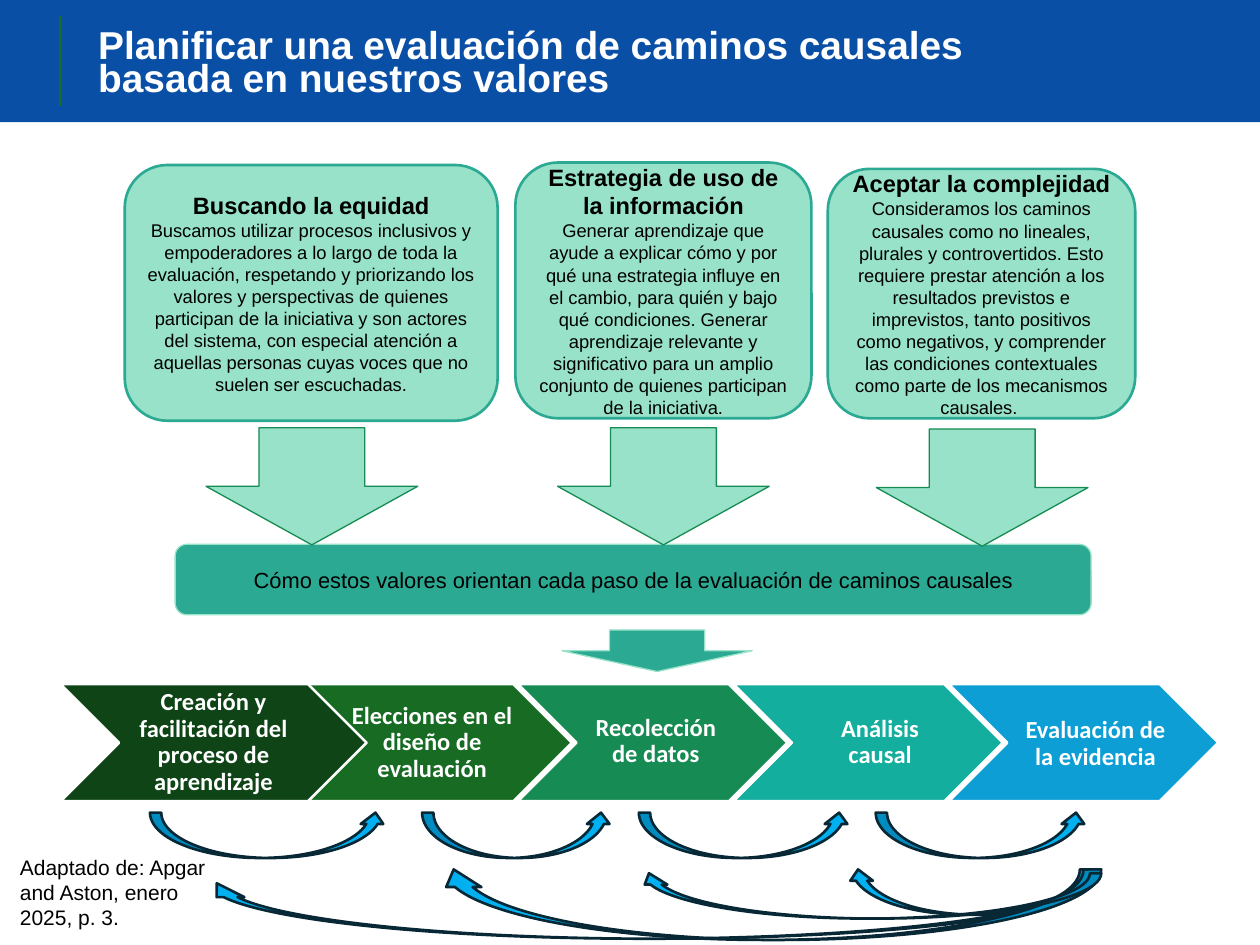
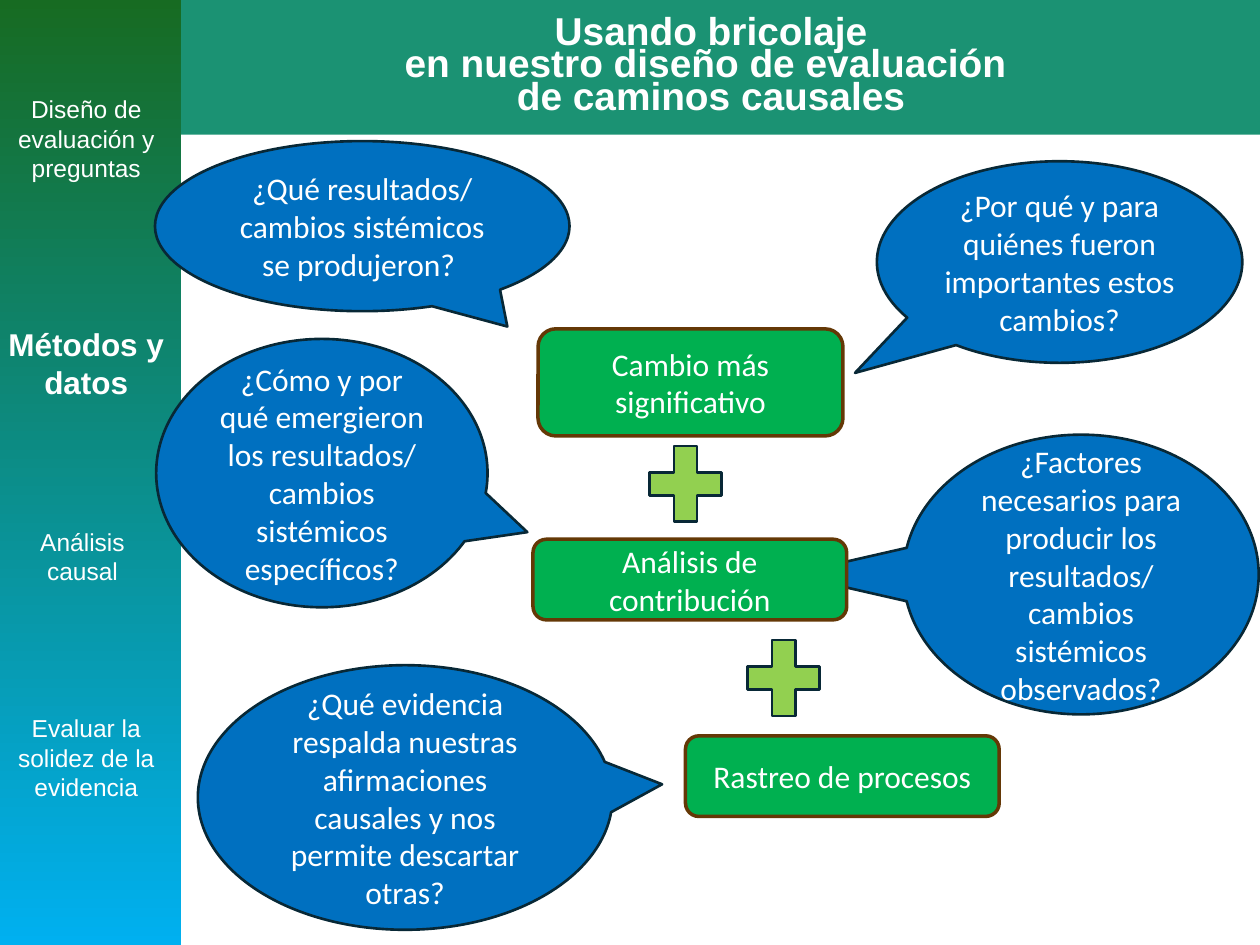
import pptx
import pptx.dml.color
import pptx.enum.dml
import pptx.enum.shapes
import pptx.enum.text
import pptx.util
from lxml import etree

Inches = pptx.util.Inches
SHAPE = pptx.enum.shapes.MSO_SHAPE
ALIGN = pptx.enum.text.PP_ALIGN
ANCHOR = pptx.enum.text.MSO_ANCHOR

WHITE, BLACK, NAVY = "FFFFFF", "000000", "082836"
FOREST, GREEN, TEAL, MINT, SKY = "176B22", "168B53", "2BA992", "97E2C8", "00B0F0"
CALLOUT_BLUE, METHOD_GREEN, METHOD_EDGE, PLUS_GREEN = "0070C0", "00B050", "643806", "92D050"


def rgb(color):
    return pptx.dml.color.RGBColor.from_string(color)


def write(shape, paragraphs, font, color, insets, align=ALIGN.CENTER,
          anchor=ANCHOR.MIDDLE, spacing=1.0):
    frame = shape.text_frame
    frame.word_wrap = True
    frame.vertical_anchor = anchor
    frame.margin_left, frame.margin_top, frame.margin_right, frame.margin_bottom = map(Inches, insets)
    for index, (text, size, bold) in enumerate(paragraphs):
        paragraph = frame.add_paragraph() if index else frame.paragraphs[0]
        paragraph.alignment = align
        paragraph.line_spacing = spacing
        for row, line in enumerate(text.split("\n")):
            if row:
                paragraph.add_line_break()
            run = paragraph.add_run()
            run.text = line
            run.font.name = font
            run.font.size = pptx.util.Pt(size)
            run.font.bold = bold
            run.font.color.rgb = rgb(color)


def add_box(shapes, kind, at, fill, edge=None, weight=1.5, adjust=(), rotation=0):
    box = shapes.add_shape(kind, *map(Inches, at))
    box.shadow.inherit = False
    box.rotation = rotation
    box.fill.solid()
    box.fill.fore_color.rgb = rgb(fill)
    if edge:
        box.line.color.rgb = rgb(edge)
        box.line.width = pptx.util.Pt(weight)
    else:
        box.line.fill.background()
    for index, value in enumerate(adjust):
        box.adjustments[index] = value
    return box


def add_text(shapes, at, paragraphs, font, color, insets, **layout):
    label = shapes.add_textbox(*map(Inches, at))
    write(label, paragraphs, font, color, insets, **layout)
    return label


def add_title(shapes, band_height, band_color, at, lines, align):
    add_box(shapes, SHAPE.RECTANGLE, (0, 0, 10, band_height), band_color)
    add_text(shapes, at, [(line, 22.2, True) for line in lines], "Arial", WHITE,
             (0.05,) * 4, align=align, spacing=0.7)


def add_accent(shapes, x, top, bottom):
    accent = shapes.add_connector(pptx.enum.shapes.MSO_CONNECTOR.STRAIGHT,
                                  *map(Inches, (x, top, x, bottom)))
    accent.line.color.rgb = rgb("196B24")
    accent.line.width = pptx.util.Pt(2)
    properties = accent.element.spPr
    etree.SubElement(properties, "{http://schemas.openxmlformats.org/drawingml/2006/main}effectLst")


def add_value(shapes, at, heading, body):
    card = add_box(shapes, SHAPE.ROUNDED_RECTANGLE, at, MINT, TEAL)
    write(card, [(heading, 13.5, True), (body, 10.5, False)], "Arial", BLACK,
          (0.07, 0.04, 0.07, 0.04))


def add_down_arrow(shapes, at, fill, edge):
    add_box(shapes, SHAPE.RIGHT_ARROW, at, fill, edge, 0.75, rotation=90)


def add_forward_arrow(shapes, left, width):
    add_box(shapes, SHAPE.CURVED_UP_ARROW, (left, 6.45, width, 0.36), SKY, NAVY)


def add_return_arrow(shapes, at):
    add_box(shapes, SHAPE.CURVED_DOWN_ARROW, at, SKY, NAVY, rotation=180)


def add_callout(shapes, at, pointer, question):
    bubble = add_box(shapes, SHAPE.OVAL_CALLOUT, at, CALLOUT_BLUE, NAVY, adjust=pointer)
    write(bubble, [(question, 18, False)], "Calibri", WHITE, (0.1, 0.05, 0.1, 0.05))


def add_method(shapes, at, name):
    method = add_box(shapes, SHAPE.ROUNDED_RECTANGLE, at, METHOD_GREEN, METHOD_EDGE, 2)
    write(method, [(name, 18, False)], "Calibri", WHITE, (0.1, 0.05, 0.1, 0.05))


def add_plus(shapes, left, top):
    add_box(shapes, SHAPE.MATH_PLUS, (left, top, 0.78, 0.82), PLUS_GREEN, NAVY)


def add_steps(shapes):
    steps = [
        ("Elecciones en el diseño de evaluación", FOREST, (2.6, 5.43, 1.59, 0.93), 0.09),
        ("Recolección\nde datos", GREEN, (4.54, 5.42, 1.28, 0.93), 0.07),
        ("Análisis\ncausal", "13AE9E", (6.39, 5.43, 1.14, 0.93), 0.07),
        ("Evaluación de\nla evidencia", "0C9ED5", (8.03, 5.44, 1.28, 0.93), 0.07),
    ]
    for index, (step, color, label_at, inset) in enumerate(steps):
        outline = SHAPE.CHEVRON if index else SHAPE.PENTAGON
        add_box(shapes, outline, (2.4 + 1.71 * index, 5.43, 2.14, 0.93), color, WHITE)
        add_text(shapes, label_at, [(step, 14, True)], "Calibri", WHITE,
                 (inset, 0.05, 0.02, 0.05), spacing=0.9)
    first_step = add_box(shapes, SHAPE.CHEVRON, (0.48, 5.43, 2.43, 0.93), "0F4416", WHITE)
    write(first_step, [("Creación y facilitación del proceso de aprendizaje", 14, True)],
          "Calibri", WHITE, (0.07,) * 4, spacing=0.9)


def build_values_slide(shapes):
    add_title(shapes, 0.97, "0A4FA6", (0.73, 0.21, 7.43, 0.63),
              ["Planificar una evaluación de caminos causales basada en nuestros valores"],
              ALIGN.LEFT)
    add_accent(shapes, 0.48, 0.13, 0.84)
    credit = add_text(shapes, (0.06, 6.73, 1.68, 0.71),
                      [("Adaptado de: Apgar and Aston, enero 2025, p. 3.", 12, False)],
                      "Arial", BLACK, (0.1, 0.05, 0.1, 0.05), align=ALIGN.LEFT, anchor=ANCHOR.TOP)
    credit.text_frame.auto_size = pptx.enum.text.MSO_AUTO_SIZE.SHAPE_TO_FIT_TEXT
    add_steps(shapes)

    add_value(shapes, (0.99, 1.31, 2.96, 2.03), "Buscando la equidad",
              "Buscamos utilizar procesos inclusivos y empoderadores a lo largo de toda la "
              "evaluación, respetando y priorizando los valores y perspectivas de quienes "
              "participan de la iniciativa y son actores del sistema, con especial atención a "
              "aquellas personas cuyas voces que no suelen ser escuchadas.")
    add_value(shapes, (6.57, 1.34, 2.44, 1.98), "Aceptar la complejidad",
              "Consideramos los caminos causales como no lineales, plurales y controvertidos. "
              "Esto requiere prestar atención a los resultados previstos e imprevistos, tanto "
              "positivos como negativos, y comprender las condiciones contextuales como parte "
              "de los mecanismos causales. ")
    add_value(shapes, (4.09, 1.29, 2.35, 2.03), "Estrategia de uso de la información",
              "Generar aprendizaje que ayude a explicar cómo y por qué una estrategia influye "
              "en el cambio, para quién y bajo qué condiciones. Generar aprendizaje relevante y "
              "significativo para un amplio conjunto de quienes participan de la iniciativa.")

    add_down_arrow(shapes, (5.05, 4.41, 0.33, 1.51), TEAL, MINT)
    guidance = add_box(shapes, SHAPE.ROUNDED_RECTANGLE, (1.39, 4.32, 7.27, 0.56), TEAL, MINT, 0.75)
    write(guidance, [("Cómo estos valores orientan cada paso de la evaluación de caminos causales",
                      12.5, False)], "Arial", BLACK, (0.07,) * 4)
    for left, top in [(2.01, 3.02), (4.8, 3.02), (7.33, 3.03)]:
        add_down_arrow(shapes, (left, top, 0.93, 1.68), MINT, GREEN)

    for left, width in [(1.19, 1.88), (3.35, 1.51), (5.07, 1.68), (6.95, 1.68)]:
        add_forward_arrow(shapes, left, width)
    for at in [(6.72, 6.9, 1.94, 0.36), (1.61, 7.01, 7.03, 0.44),
               (3.46, 6.9, 5.28, 0.56), (5.06, 6.93, 3.68, 0.36)]:
        add_return_arrow(shapes, at)


def add_sidebar(shapes):
    sidebar = shapes.add_group_shape().shapes
    band = add_box(sidebar, SHAPE.FLOWCHART_PROCESS, (-0.07, 0, 1.51, 7.5), FOREST)
    band.fill.gradient()
    band.fill.gradient_angle = 270
    for stop, position, color in zip(band.fill.gradient_stops, (0, 1), (FOREST, SKY)):
        stop.position = position
        stop.color.rgb = rgb(color)
    stages = [
        ("Diseño de evaluación y preguntas", -0.07, 0.65, 14, False),
        ("Métodos y datos", -0.07, 2.48, 18, True),
        ("Análisis\ncausal", -0.1, 4.08, 14, False),
        ("Evaluar la solidez de la evidencia", -0.07, 5.56, 14, False),
    ]
    for stage, left, top, size, current in stages:
        add_text(sidebar, (left, top, 1.51, 0.93), [(stage, size, current)], "Arial", WHITE,
                 (0.1,) * 4, anchor=ANCHOR.TOP)


def build_bricolage_slide(shapes):
    add_title(shapes, 1.07, "1B9273", (1.68, 0.09, 7.93, 0.9),
              ["Usando bricolaje", "en nuestro diseño de evaluación \nde caminos causales"],
              ALIGN.CENTER)
    add_sidebar(shapes)
    callouts = [
        ((6.96, 1.28, 2.9, 1.6), (-0.56, 0.55),
         "¿Por qué y para quiénes fueron importantes estos cambios?"),
        ((1.57, 5.28, 3.29, 2.1), (0.62, -0.05),
         "¿Qué evidencia respalda nuestras afirmaciones causales y nos permite descartar otras?"),
        ((7.17, 3.45, 2.82, 2.22), (-0.82, 0),
         "¿Factores necesarios para producir los resultados/ cambios sistémicos observados?"),
        ((1.24, 2.69, 2.63, 2.13), (0.62, 0.22),
         "¿Cómo y por qué emergieron los resultados/ cambios sistémicos específicos?"),
        ((1.23, 1.12, 3.29, 1.35), (0.35, 0.59),
         "¿Qué resultados/ cambios sistémicos se produjeron? "),
    ]
    for at, pointer, question in callouts:
        add_callout(shapes, at, pointer, question)
    add_method(shapes, (4.27, 2.61, 2.42, 0.85), "Cambio más significativo")
    add_method(shapes, (4.23, 4.28, 2.49, 0.64), "Análisis de contribución")
    add_method(shapes, (5.44, 5.84, 2.49, 0.64), "Rastreo de procesos")
    add_plus(shapes, 5.05, 3.43)
    add_plus(shapes, 5.83, 4.97)


def main():
    deck = pptx.Presentation()
    deck.slide_width, deck.slide_height = Inches(10), Inches(7.5)
    for build in (build_values_slide, build_bricolage_slide):
        build(deck.slides.add_slide(deck.slide_layouts[6]).shapes)
    deck.save("out.pptx")


if __name__ == "__main__":
    main()
